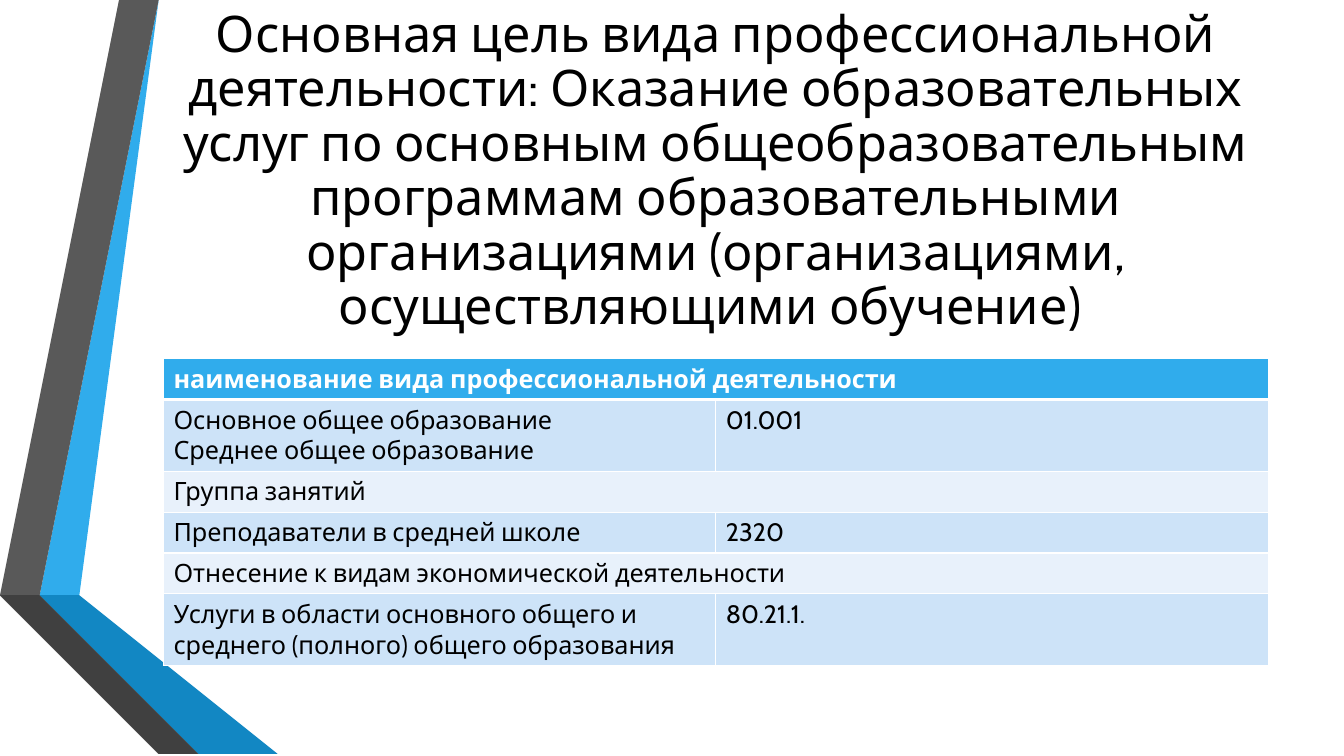
from dataclasses import dataclass

from lxml import etree
from pptx import Presentation
from pptx.dml.color import RGBColor
from pptx.enum import text
from pptx.oxml.ns import qn
from pptx.util import Cm, Pt


@dataclass(frozen=True)
class Theme:
    font: str = "Cabin"
    title_size: int = 36
    table_size: int = 18
    ink: str = "000000"
    paper: str = "FFFFFF"
    blue: str = "30ACEC"
    blue_fold: str = "1287C3"
    blue_edge: str = "0C5A82"
    grey: str = "595959"
    grey_fold: str = "404040"
    grey_edge: str = "262626"
    dark_row: str = "CDE3F8"
    light_row: str = "E8F1FB"


class SlideBuilder:
    def __init__(self, deck, theme):
        self.theme = theme
        self.slide = deck.slides.add_slide(deck.slide_layouts[5])
        self.slide.background.fill.solid()
        self.slide.background.fill.fore_color.rgb = RGBColor.from_string(theme.paper)

    def add_words(self, paragraph, words, size, color, bold=False):
        run = paragraph.add_run()
        run.text = words
        run.font.name = self.theme.font
        run.font.size = Pt(size)
        run.font.bold = bold
        run.font.color.rgb = RGBColor.from_string(color)

    def title(self, words, left, top, width, height):
        heading = self.slide.shapes.title
        heading.left, heading.top = Cm(left), Cm(top)
        heading.width, heading.height = Cm(width), Cm(height)
        frame = heading.text_frame
        frame.word_wrap = True
        frame.auto_size = text.MSO_AUTO_SIZE.NONE
        frame.vertical_anchor = text.MSO_ANCHOR.MIDDLE
        paragraph = frame.paragraphs[0]
        paragraph.alignment = text.PP_ALIGN.CENTER
        paragraph.line_spacing = 0.9
        self.add_words(paragraph, words, self.theme.title_size, self.theme.ink)

    def ribbon(self, color, points):
        """Draw a filled outline through points given in centimetres."""
        start, *rest = points
        builder = self.slide.shapes.build_freeform(*start, scale=Cm(1))
        builder.add_line_segments(rest, close=True)
        part = builder.convert_to_shape()
        part.shadow.inherit = False
        part.fill.solid()
        part.fill.fore_color.rgb = RGBColor.from_string(color)
        part.line.fill.background()

    def border(self, cell, bottom_width):
        properties = cell._tc.get_or_add_tcPr()
        widths = {"a:lnL": 1, "a:lnR": 1, "a:lnT": 1, "a:lnB": bottom_width}
        for side, width in widths.items():
            line = etree.SubElement(properties, qn(side), w=str(Pt(width)))
            fill = etree.SubElement(line, qn("a:solidFill"))
            etree.SubElement(fill, qn("a:srgbClr"), val=self.theme.paper)

    def table(self, rows, left, top, width, row_height):
        """Fill a two-column table; a row with one entry spans both columns."""
        theme = self.theme
        grid = self.slide.shapes.add_table(
            len(rows), 2, Cm(left), Cm(top), Cm(width), Cm(row_height * len(rows))
        ).table
        for index, entries in enumerate(rows):
            header = index == 0
            band = theme.dark_row if index % 2 else theme.light_row
            for column in range(2):
                cell = grid.cell(index, column)
                self.border(cell, 3 if header else 1)
                cell.fill.solid()
                cell.fill.fore_color.rgb = RGBColor.from_string(theme.blue if header else band)
            if len(entries) == 1:
                grid.cell(index, 0).merge(grid.cell(index, 1))
            for column, entry in enumerate(entries):
                frame = grid.cell(index, column).text_frame
                for number, words in enumerate(entry.split("\n")):
                    paragraph = frame.add_paragraph() if number else frame.paragraphs[0]
                    self.add_words(paragraph, words, theme.table_size,
                                   theme.paper if header else theme.ink, bold=header)


def main():
    deck = Presentation()
    deck.slide_width, deck.slide_height = Cm(33.87), Cm(19.05)
    theme = Theme()
    page = SlideBuilder(deck, theme)

    foot = 19.05
    grey_corner, blue_corner = (0.41, 14.55), (1.27, 14.69)
    grey_bend, blue_bend = (1.12, 14.66), (1.96, 14.81)
    ribbons = [
        (theme.blue, [blue_corner, blue_bend, (4.39, 0), (3.68, 0)]),
        (theme.grey, [(3.53, 0), (2.82, 0), grey_corner, grey_bend]),
        (theme.grey_edge, [grey_corner, (3.68, foot), (3.84, foot)]),
        (theme.blue_edge, [blue_corner, (5.28, foot), (5.44, foot)]),
        (theme.blue_fold, [blue_corner, (5.44, foot), (7.19, foot), blue_bend]),
        (theme.grey_fold, [grey_corner, (3.84, foot), (5.13, foot), (1.22, 14.81), grey_bend]),
    ]
    for color, points in ribbons:
        page.ribbon(color, points)

    left, width = 4.12, 27.84
    page.title(
        "Основная цель вида профессиональной деятельности: Оказание образовательных услуг "
        "по основным общеобразовательным программам образовательными организациями "
        "(организациями, осуществляющими обучение) ",
        left, 1.9, width, 4.88,
    )
    page.table(
        [
            ["наименование вида профессиональной деятельности"],
            ["Основное общее образование\nСреднее общее образование", "01.001"],
            ["Группа занятий"],
            ["Преподаватели в средней школе", "2320"],
            ["Отнесение к видам экономической деятельности"],
            ["Услуги в области основного общего и среднего (полного) общего образования",
             "80.21.1."],
        ],
        left, 9.04, width, row_height=1.03,
    )
    deck.save("out.pptx")


if __name__ == "__main__":
    main()
